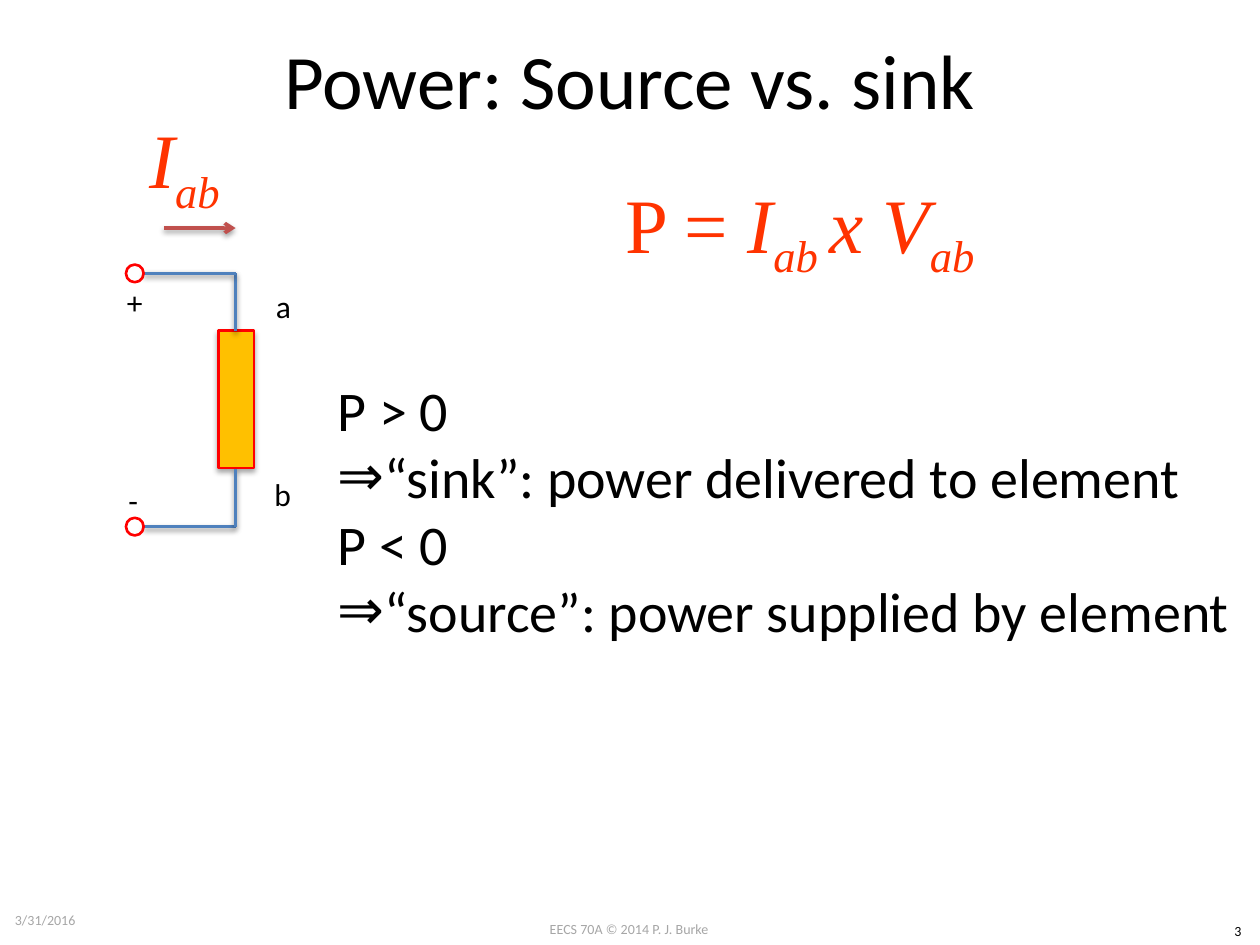
from lxml.etree import SubElement
from pptx import Presentation
from pptx.dml.color import RGBColor
from pptx.enum.shapes import MSO_CONNECTOR as LineKind, MSO_SHAPE as Shape
from pptx.enum.text import MSO_ANCHOR as Anchor, MSO_AUTO_SIZE as Fit, PP_ALIGN as Align
from pptx.oxml import parse_xml
from pptx.oxml.ns import nsdecls, qn
from pptx.util import Inches, Pt

color = RGBColor.from_string

deck = Presentation()
deck.slide_width, deck.slide_height = Inches(10), Inches(7.5)
slide = deck.slides.add_slide(deck.slide_layouts[6])


def write(bounds, paragraphs, size, ink="000000", face="Calibri", align=Align.LEFT,
          anchor=Anchor.MIDDLE, wrap=True, fit=Fit.NONE):
    frame = slide.shapes.add_textbox(*map(Inches, bounds)).text_frame
    layout = {"word_wrap": wrap, "auto_size": fit, "vertical_anchor": anchor}
    for key, value in layout.items():
        setattr(frame, key, value)
    for index, pieces in enumerate(paragraphs):
        paragraph = frame.paragraphs[0] if index == 0 else frame.add_paragraph()
        paragraph.alignment = align
        for words, italic, subscript in pieces:
            run = paragraph.add_run()
            run.text = words
            look = {"size": Pt(size), "name": face, "italic": italic}
            for key, value in look.items():
                setattr(run.font, key, value)
            run.font.color.rgb = color(ink)
            if subscript:
                run.font._element.set("baseline", "-25000")
    return frame


def cast_shadow(part, opacity, blur, distance):
    part._element.spPr.append(parse_xml(
        f'<a:effectLst {nsdecls("a")}><a:outerShdw blurRad="{Pt(blur)}" dist="{Pt(distance)}" '
        f'dir="5400000" rotWithShape="0"><a:srgbClr val="000000">'
        f'<a:alpha val="{opacity * 1000}"/></a:srgbClr></a:outerShdw></a:effectLst>'))


footer = {"size": 8, "align": Align.CENTER, "anchor": Anchor.TOP, "fit": Fit.SHAPE_TO_FIT_TEXT}
write((3.83, 7.26, 2.33, 0.24), [[("EECS 70A © 2014 P. J. Burke", False, False)]],
      ink="A6A6A6", **footer)
write((9.65, 7.27, 0.35, 0.24), [[("3", False, False)]], **footer)
write((0.02, 7.1, 2.33, 0.4), [[("3/31/2016", False, False)]], 8, "A6A6A6")
write((0.5, 0, 9, 1.25), [[("Power: Source vs. sink", False, False)]], 44, align=Align.CENTER)

resistor = slide.shapes.add_shape(
    Shape.RECTANGLE, Inches(1.33), Inches(3.03), Inches(1.09), Inches(0.28))
resistor.rotation = 90
resistor.fill.solid()
resistor.fill.fore_color.rgb = color("FFC000")
resistor.line.color.rgb = color("FF0000")
resistor.line.width = Pt(1.5)
cast_shadow(resistor, 35, 3.1, 1.8)

wire_x, top_y, bottom_y = 1.87, 2.17, 4.18
wires = [
    (1.14, bottom_y, wire_x, bottom_y, "4F81BD"),
    (wire_x, bottom_y, wire_x, 3.72, "4F81BD"),
    (wire_x, 2.63, wire_x, top_y, "4F81BD"),
    (1.14, top_y, wire_x, top_y, "4F81BD"),
    (1.3, 1.81, wire_x, 1.81, "C0504D"),
]
for *ends, ink in wires:
    wire = slide.shapes.add_connector(LineKind.STRAIGHT, *map(Inches, ends))
    wire.line.color.rgb = color(ink)
    wire.line.width = Pt(2)
    cast_shadow(wire, 38, 3.1, 1.6)
current_arrow = wire
SubElement(current_arrow.line._get_or_add_ln(), qn("a:tailEnd"), type="arrow")

for y in (top_y, bottom_y):
    terminal = slide.shapes.add_shape(
        Shape.OVAL, Inches(1), Inches(y - 0.07), Inches(0.14), Inches(0.14))
    terminal.shadow.inherit = False
    terminal.fill.background()
    terminal.line.color.rgb = color("FF0000")
    terminal.line.width = Pt(1.5)

label = {"anchor": Anchor.TOP, "wrap": False, "fit": Fit.SHAPE_TO_FIT_TEXT}
node_labels = [
    ("a", 2.09, 2.23, 0.32), ("b", 2.08, 3.72, 0.34),
    ("+", 0.91, 2.2, 0.33), ("-", 0.92, 3.77, 0.28),
]
for words, x, y, width in node_labels:
    write((x, y, width, 0.4), [[(words, False, False)]], 18, **label)

formula = {"size": 44, "ink": "FF3300", "face": "Times New Roman", "align": Align.CENTER}
write((0.84, 0.8, 1.25, 1.01), [[("I", True, False), ("ab", True, True)]], **formula)
write((4.49, 1.31, 3.72, 1.01),
      [[("P = ", False, False), ("I", True, False), ("ab ", True, True),
        ("x V", True, False), ("ab", True, True)]], **formula)

rules = ["P > 0", "“sink”: power delivered to element",
         "P < 0", "“source”: power supplied by element"]
sign_rules = write((2.58, 2.93, 7.42, 2.26),
                   [[(words, False, False)] for words in rules], 32, **label)
for conclusion in sign_rules.paragraphs[1::2]:
    properties = conclusion._p.get_or_add_pPr()
    for key, value in {"marL": Inches(0.34), "indent": Inches(-0.34)}.items():
        properties.set(key, str(value))
    SubElement(properties, qn("a:buFont"), typeface="Calibri")
    SubElement(properties, qn("a:buChar"), char="⇒")

deck.save("out.pptx")
